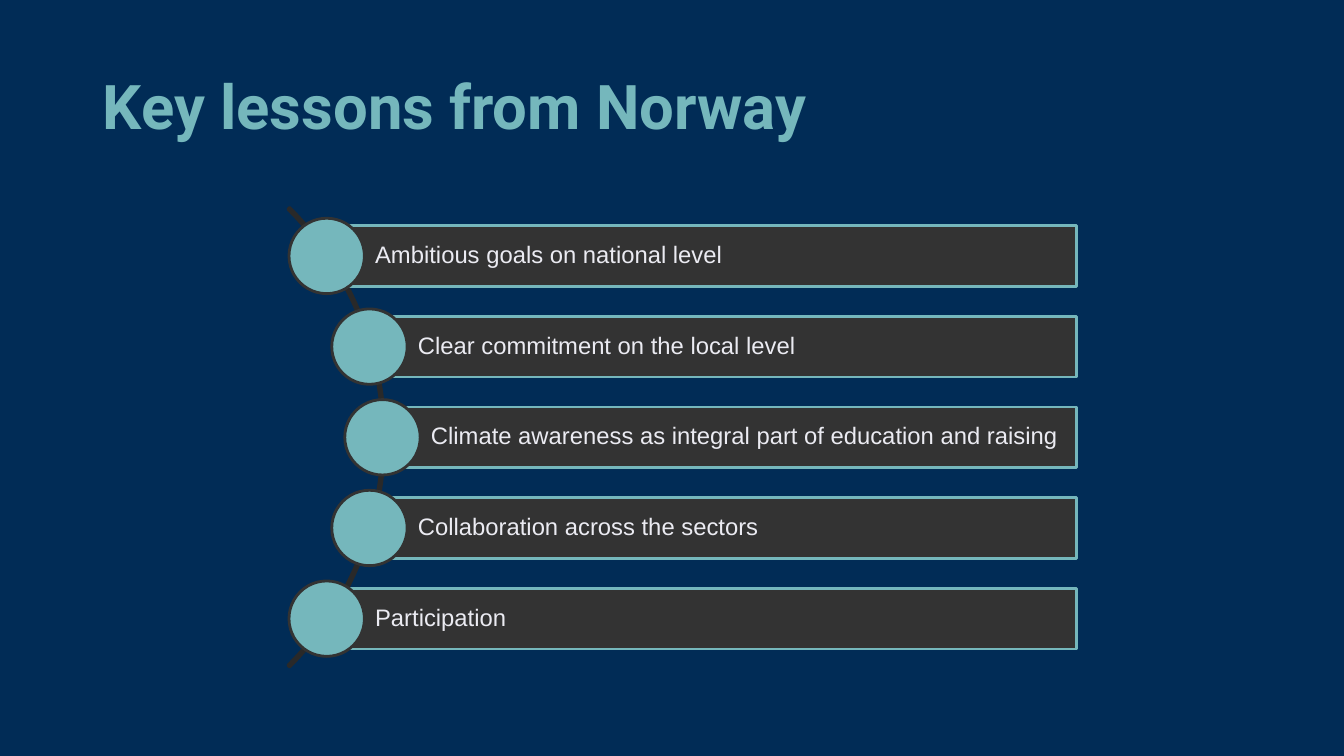
"""Build the slide on key lessons from Norway: five bars strung along an arc."""
import math

from pptx import Presentation
from pptx.dml import color
from pptx.enum import shapes, text
from pptx.util import Cm, Pt

NAVY = color.RGBColor(0x01, 0x2C, 0x56)
TEAL = color.RGBColor(0x75, 0xB7, 0xBC)
CHARCOAL = color.RGBColor(0x33, 0x33, 0x33)
ARC_GREY = color.RGBColor(0x29, 0x29, 0x29)
PALE = color.RGBColor(0xEB, 0xEB, 0xF2)

LESSONS = [
    "Ambitious goals on national level",
    "Clear commitment on the local level",
    "Climate awareness as integral part of education and raising",
    "Collaboration across the sectors",
    "Participation",
]
ARC_X, ARC_Y, ARC_SIZE = 1.51, 11.02, 16.38
CIRCLE_ORBIT, CIRCLE_SIZE = 8.13, 1.9
BAR_RIGHT, BAR_HEIGHT, BAR_PITCH = 27.13, 1.53, 2.285


def write_text(shape, content, *, font, size, fill, bold=False, inset=0.25, margin=0.13):
    frame = shape.text_frame
    frame.word_wrap = True
    frame.auto_size = text.MSO_AUTO_SIZE.NONE
    frame.vertical_anchor = text.MSO_ANCHOR.MIDDLE
    frame.margin_left, frame.margin_right = Cm(inset), Cm(margin)
    frame.margin_top = frame.margin_bottom = Cm(0.13)
    paragraph = frame.paragraphs[0]
    paragraph.alignment = text.PP_ALIGN.LEFT
    paragraph.line_spacing = 0.9
    run = paragraph.add_run()
    run.text = content
    run.font.name, run.font.size, run.font.bold = font, Pt(size), bold
    run.font.color.rgb = fill


def add_figure(kind, left, top, width, height, fill, line):
    shape = slide.shapes.add_shape(kind, Cm(left), Cm(top), Cm(width), Cm(height))
    shape.shadow.inherit = False
    shape.fill.solid()
    shape.fill.fore_color.rgb = fill
    shape.line.color.rgb = line
    shape.line.width = Pt(2)
    return shape


presentation = Presentation()
presentation.slide_width, presentation.slide_height = Cm(33.87), Cm(19.05)
slide = presentation.slides.add_slide(presentation.slide_layouts[5])
slide.background.fill.solid()
slide.background.fill.fore_color.rgb = NAVY

title = slide.shapes.title
title.left, title.top, title.width, title.height = Cm(2.34), Cm(0.91), Cm(29.21), Cm(3.68)
write_text(title, "Key lessons from Norway", font="Roboto", size=44, fill=TEAL,
           bold=True, margin=0.25)

arc = add_figure(shapes.MSO_SHAPE.BLOCK_ARC, ARC_X - ARC_SIZE / 2, ARC_Y - ARC_SIZE / 2,
                 ARC_SIZE, ARC_SIZE, ARC_GREY, ARC_GREY)
for index, value in enumerate((189, 27, 0.004)):
    arc.adjustments[index] = value

for index, lesson in enumerate(LESSONS):
    offset = (index - len(LESSONS) // 2) * BAR_PITCH
    center_x = ARC_X + math.sqrt(CIRCLE_ORBIT ** 2 - offset ** 2)
    center_y = ARC_Y + offset
    bar = add_figure(shapes.MSO_SHAPE.RECTANGLE, center_x, center_y - BAR_HEIGHT / 2,
                     BAR_RIGHT - center_x, BAR_HEIGHT, CHARCOAL, TEAL)
    write_text(bar, lesson, font="Arial", size=17, fill=PALE, inset=1.22)
    add_figure(shapes.MSO_SHAPE.OVAL, center_x - CIRCLE_SIZE / 2, center_y - CIRCLE_SIZE / 2,
               CIRCLE_SIZE, CIRCLE_SIZE, TEAL, CHARCOAL)

presentation.save("out.pptx")
